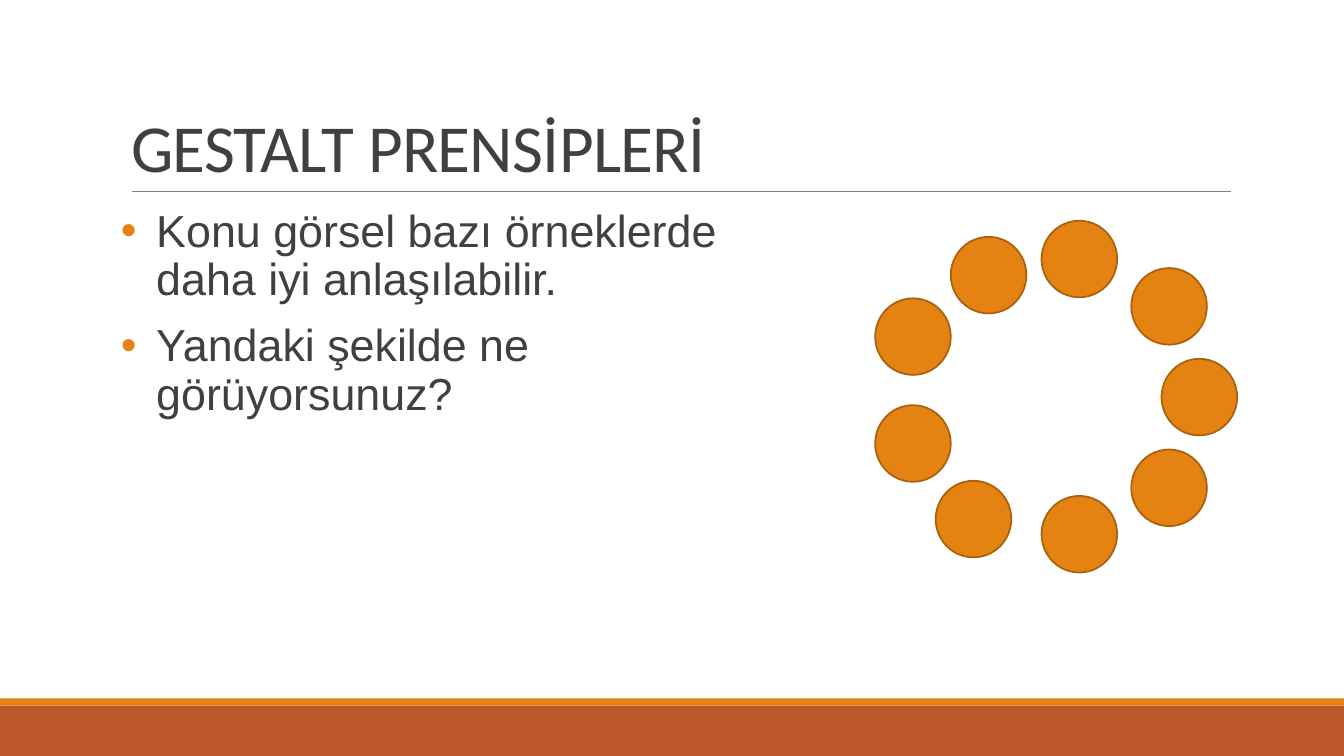
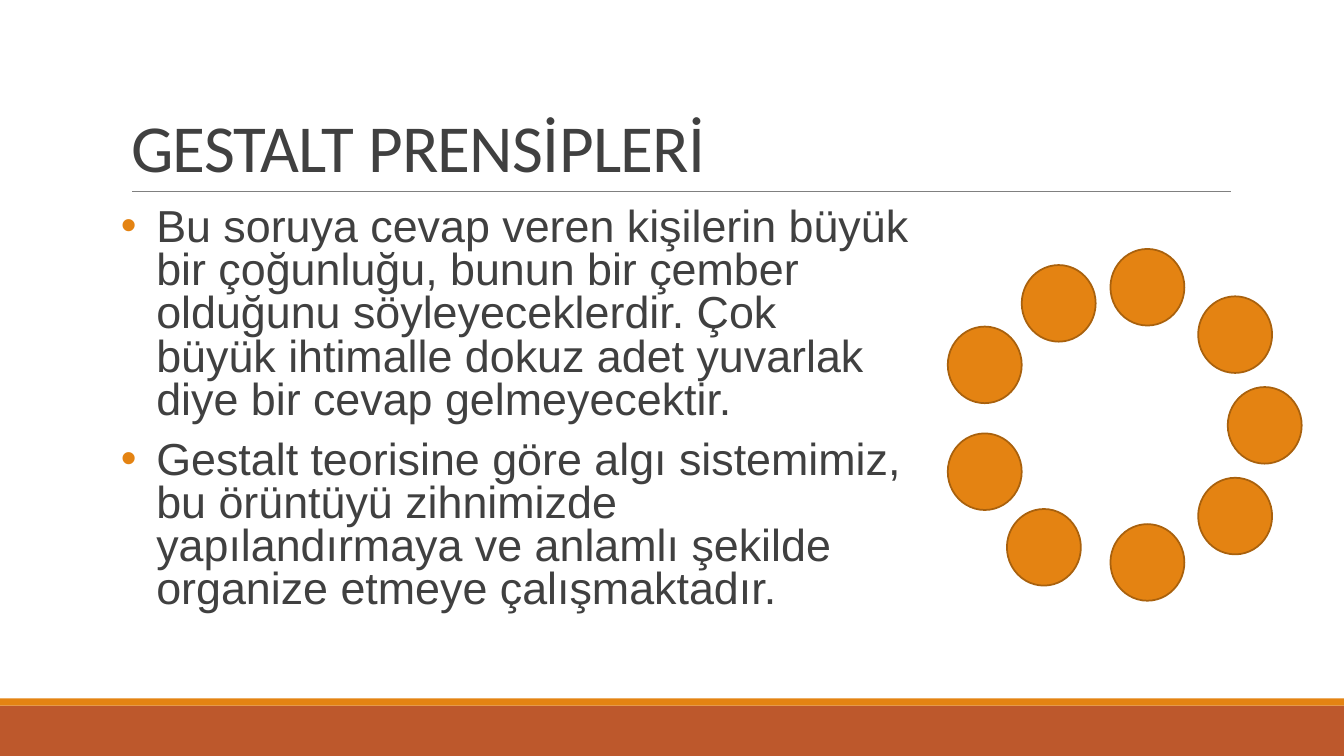
"""Build two slides on the Gestalt principles, each with a ring of nine circles."""
from dataclasses import dataclass

from lxml.etree import SubElement
from pptx import Presentation
from pptx.dml.color import RGBColor
from pptx.enum.shapes import MSO_CONNECTOR, MSO_SHAPE
from pptx.enum.text import MSO_ANCHOR, MSO_AUTO_SIZE, PP_ALIGN
from pptx.oxml.ns import qn
from pptx.util import Emu, Pt


@dataclass(frozen=True)
class Theme:
    accent: str = "E48312"
    accent_edge: str = "A9610D"
    band: str = "BD582C"
    rule: str = "808080"
    ink: str = "404040"
    title_font: str = "Calibri"
    body_font: str = "Arial"
    title_size: int = 48
    body_size: int = 32


THEME = Theme()
EMU_PER_PX = 9144
SLIDE_WIDTH, SLIDE_HEIGHT = 1333, 750
TITLE = "GESTALT PRENSİPLERİ"
BULLET_INDENT = 35
CIRCLE_WIDTH, CIRCLE_HEIGHT = 75, 76
CIRCLE_OFFSETS = [
    (254, 227), (0, 77), (75, 16), (165, 0), (254, 47),
    (284, 137), (165, 273), (60, 258), (0, 183),
]
CONTENT = [
    dict(
        bullets=[
            "Konu görsel bazı örneklerde daha iyi anlaşılabilir.",
            "Yandaki şekilde ne görüyorsunuz?",
        ],
        text_width=674, line_spacing=0.9, ring=(868, 219, 359),
    ),
    dict(
        bullets=[
            "Bu soruya cevap veren kişilerin büyük bir çoğunluğu, bunun bir çember "
            "olduğunu söyleyeceklerdir. Çok büyük ihtimalle dokuz adet yuvarlak diye "
            "bir cevap gelmeyecektir.",
            "Gestalt teorisine göre algı sistemimiz, bu örüntüyü zihnimizde "
            "yapılandırmaya ve anlamlı şekilde organize etmeye çalışmaktadır.",
        ],
        text_width=782, line_spacing=0.8, ring=(940, 247, 351),
    ),
]


def px(*lengths):
    return [Emu(length * EMU_PER_PX) for length in lengths]


def rgb(color):
    return RGBColor.from_string(color)


def write_text(para, text, *, font, size, line_spacing, before=0, after=0,
               tracking=None, bullet=None):
    para.alignment = PP_ALIGN.LEFT
    para.line_spacing = line_spacing
    para.space_before, para.space_after = Pt(before), Pt(after)
    span = para.add_run()
    span.text = text
    span.font.name, span.font.size = font, Pt(size)
    span.font.color.rgb = rgb(THEME.ink)
    if tracking is not None:
        span.font._element.set("spc", str(tracking))
    if bullet:
        add_bullet(para, bullet)


def add_bullet(para, bullet):
    properties = para._p.get_or_add_pPr()
    indent = px(BULLET_INDENT)[0]
    properties.set("marL", str(indent))
    properties.set("indent", str(-indent))
    color = SubElement(properties, qn("a:buClr"))
    SubElement(color, qn("a:srgbClr"), val=THEME.accent)
    SubElement(properties, qn("a:buFont"), typeface=THEME.body_font)
    SubElement(properties, qn("a:buChar"), char=bullet)


def add_filled(shapes, kind, bounds, fill, edge=None):
    shape = shapes.add_shape(kind, *px(*bounds))
    shape.shadow.inherit = False
    shape.fill.solid()
    shape.fill.fore_color.rgb = rgb(fill)
    if edge:
        shape.line.color.rgb = rgb(edge)
        shape.line.width = Pt(1.25)
    else:
        shape.line.fill.background()


def add_frame(page):
    add_filled(page.shapes, MSO_SHAPE.RECTANGLE, (0, 700, SLIDE_WIDTH, 50), THEME.band)
    add_filled(page.shapes, MSO_SHAPE.RECTANGLE, (0, 693, SLIDE_WIDTH, 7), THEME.accent)
    rule = page.shapes.add_connector(MSO_CONNECTOR.STRAIGHT, *px(131, 190, 1221, 190))
    rule.line.color.rgb = rgb(THEME.rule)
    rule.line.width = Pt(0.5)
    SubElement(rule._element.spPr, qn("a:effectLst"))


def set_title(page, text):
    title = page.shapes.title
    title.left, title.top, title.width, title.height = px(120, 31, 1100, 159)
    frame = title.text_frame
    frame.auto_size = MSO_AUTO_SIZE.NONE
    frame.vertical_anchor = MSO_ANCHOR.BOTTOM
    write_text(frame.paragraphs[0], text, font=THEME.title_font,
               size=THEME.title_size, line_spacing=0.85, tracking=-50)


def add_bullets(page, bullets, width, line_spacing):
    box = page.shapes.add_textbox(*px(120, 202, width, 440))
    frame = box.text_frame
    frame.word_wrap = True
    frame.margin_left = frame.margin_right = 0
    frame.margin_top = frame.margin_bottom = px(5)[0]
    for index, text in enumerate(bullets):
        para = frame.add_paragraph() if index else frame.paragraphs[0]
        write_text(para, text, font=THEME.body_font, size=THEME.body_size,
                   line_spacing=line_spacing, before=10.8, after=1.8, bullet="•")


def add_ring(page, left, top, width):
    ring = page.shapes.add_group_shape()
    for across, down in CIRCLE_OFFSETS:
        add_filled(ring.shapes, MSO_SHAPE.OVAL,
                   (across, down, CIRCLE_WIDTH, CIRCLE_HEIGHT),
                   THEME.accent, THEME.accent_edge)
    ring.left, ring.top, ring.width = px(left, top, width)


def main():
    deck = Presentation()
    deck.slide_width, deck.slide_height = px(SLIDE_WIDTH, SLIDE_HEIGHT)
    for content in CONTENT:
        page = deck.slides.add_slide(deck.slide_layouts[5])
        add_frame(page)
        set_title(page, TITLE)
        add_bullets(page, content["bullets"], content["text_width"],
                    content["line_spacing"])
        add_ring(page, *content["ring"])
    deck.save("out.pptx")


if __name__ == "__main__":
    main()
